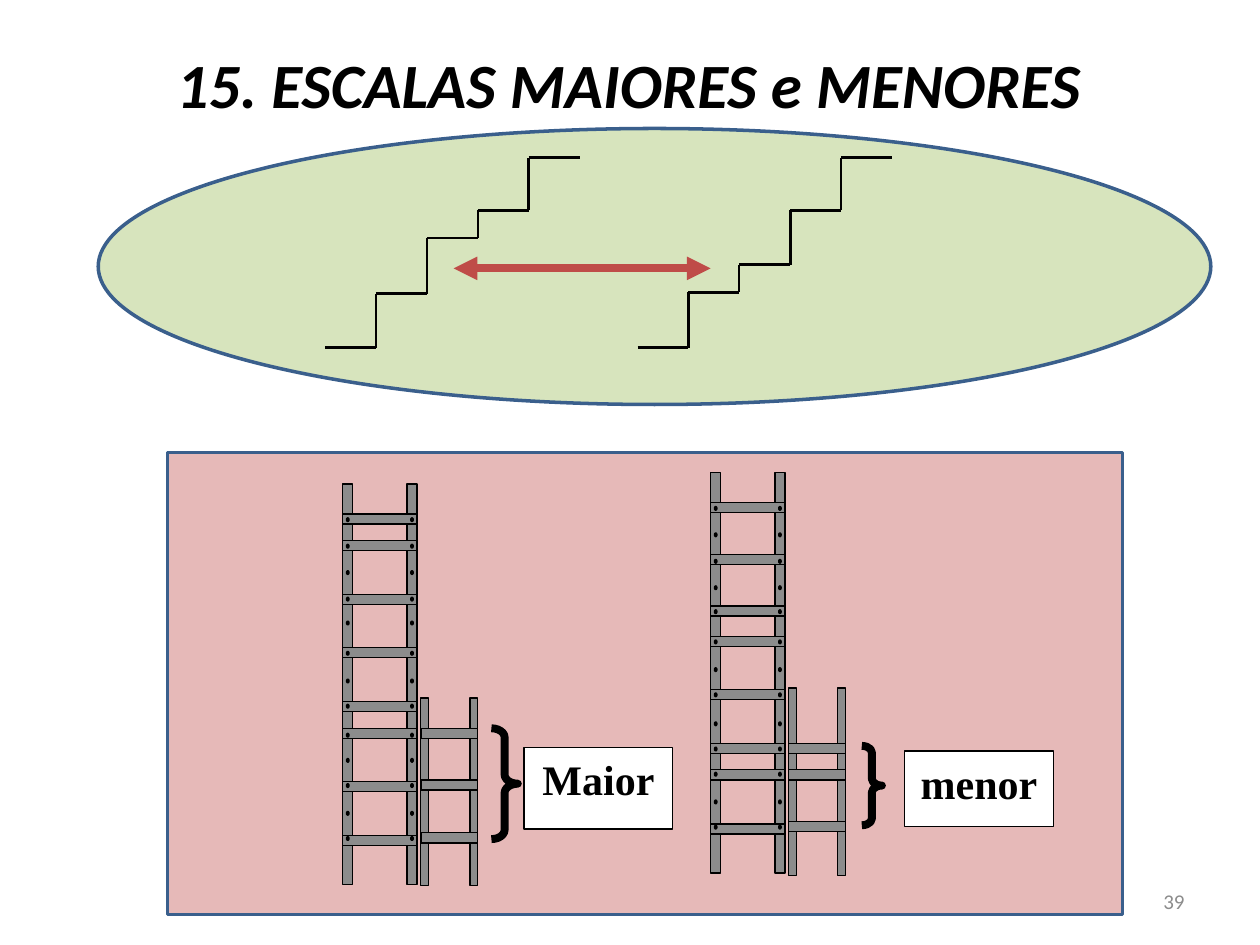
from lxml import etree
from pptx import Presentation
from pptx import util as u
from pptx.dml.color import RGBColor
from pptx.enum import shapes, text
from pptx.oxml.ns import qn

BLACK, GREY, WHITE, BLUE = "000000", "8C8C8C", "FFFFFF", "3A5F8C"
KIND, ALIGN, ANCHOR = shapes.MSO_SHAPE, text.PP_ALIGN, text.MSO_ANCHOR
color = RGBColor.from_string


def draw_shape(parent, kind, left, top, width, height, fill=None, line=BLACK, weight=0.75):
    shape = parent.add_shape(kind, *map(u.Inches, (left, top, width, height)))
    shape.shadow.inherit = False
    if fill:
        shape.fill.solid()
        shape.fill.fore_color.rgb = color(fill)
    else:
        shape.fill.background()
    shape.line.color.rgb = color(line)
    shape.line.width = u.Pt(weight)
    return shape


def write_text(box, words, size, font="Calibri", ink=BLACK, bold=False, italic=False,
               align=ALIGN.CENTER, anchor=ANCHOR.MIDDLE, wrap=True):
    frame = box.text_frame
    frame.word_wrap = wrap
    frame.vertical_anchor = anchor
    para = frame.paragraphs[0]
    para.alignment = align
    span = para.add_run()
    span.text = words
    span.font.size = u.Pt(size)
    span.font.name = font
    span.font.bold = bold
    span.font.italic = italic
    span.font.color.rgb = color(ink)


deck = Presentation()
deck.slide_width, deck.slide_height = u.Inches(10), u.Inches(7.5)
page = deck.slides.add_slide(deck.slide_layouts[6])

# Background panels and title
draw_shape(page.shapes, KIND.OVAL, 0.78, 1.02, 8.83, 2.19, "D7E4BD", BLUE, 2)
draw_shape(page.shapes, KIND.RECTANGLE, 1.33, 3.59, 7.58, 3.67, "E6B9B8", BLUE, 2)
title = page.shapes.add_textbox(u.Inches(1.25), u.Inches(0.31), u.Inches(7.48), u.Inches(0.71))
write_text(title, "15. ESCALAS MAIORES e MENORES", 36, bold=True, italic=True, wrap=False)

# Staircases: equal treads, with a thinner riser for the half step
TREAD = 0.404
segments = []
for start, levels in ((5.06, (2.76, 2.32, 2.1, 1.67, 1.25)),
                      (2.58, (2.76, 2.33, 1.89, 1.67, 1.25))):
    for step, level in enumerate(levels):
        left = start + step * TREAD
        segments.append((left, level, left + TREAD, level, BLACK, 1.5))
        if step:
            below = levels[step - 1]
            weight = 1 if below - level < 0.3 else 1.5
            segments.append((left, level, left, below, BLACK, weight))
segments.append((3.6, 2.13, 5.64, 2.13, "BF4C48", 4.5))

stairs = page.shapes.add_group_shape().shapes
for x1, y1, x2, y2, ink, weight in segments:
    arrow = stairs.add_connector(shapes.MSO_CONNECTOR.STRAIGHT,
                                 *map(u.Inches, (x1, y1, x2, y2)))
    arrow.line.color.rgb = color(ink)
    arrow.line.width = u.Pt(weight)
    etree.SubElement(arrow._element.spPr, qn("a:effectLst"))
# The last segment is the double-headed arrow
for end in ("a:headEnd", "a:tailEnd"):
    etree.SubElement(arrow.line._get_or_add_ln(), qn(end), type="triangle")

# Ladders: rungs and bolts are measured down from the top of the rails
BOLTS = (0.27, 0.48, 0.69, 0.9, 1.09, 1.33, 1.55, 1.75, 1.98, 2.18, 2.38, 2.6, 2.8)
LADDERS = (
    dict(tall=(2.72, 3.84), tall_rungs=(0.24, 0.45, 0.88, 1.3, 1.73, 1.94, 2.36, 2.79),
         short=(3.34, 5.54), short_rungs=(0.24, 0.65, 1.07),
         brace=(3.9, 5.78, 0.21, 0.88), curve=0.346,
         label="Maior", box=(4.16, 5.93, 1.18, 0.65)),
    dict(tall=(5.64, 3.75), tall_rungs=(0.24, 0.65, 1.06, 1.3, 1.72, 2.15, 2.36, 2.79),
         short=(6.26, 5.46), short_rungs=(0.44, 0.65, 1.06),
         brace=(6.84, 5.92, 0.16, 0.63), curve=0.327,
         label="menor", box=(7.18, 5.96, 1.18, 0.6)),
)
group = page.shapes.add_group_shape().shapes
for ladder in LADDERS:
    for size, rail, width, height in (("short", 0.06, 0.45, 1.49), ("tall", 0.08, 0.59, 3.18)):
        left, top = ladder[size]
        for x in (left, left + width - rail):
            draw_shape(group, KIND.RECTANGLE, x, top, rail, height, GREY)
        for drop in ladder[size + "_rungs"]:
            draw_shape(group, KIND.RECTANGLE, left, top + drop, width, 0.08, GREY)
    left, top = ladder["tall"]
    for drop in BOLTS:
        for inset in (0.03, 0.54):
            draw_shape(group, KIND.OVAL, left + inset, top + drop, 0.02, 0.03, BLACK)
    brace = draw_shape(group, KIND.RIGHT_BRACE, *ladder["brace"], weight=4.5)
    brace.adjustments[0] = ladder["curve"]
    label = draw_shape(group, KIND.RECTANGLE, *ladder["box"], WHITE)
    write_text(label, ladder["label"], 24, font="Times New Roman", bold=True, anchor=ANCHOR.TOP)

number = page.shapes.add_textbox(u.Inches(7.17), u.Inches(6.95), u.Inches(2.33), u.Inches(0.4))
write_text(number, "39", 12, ink=GREY, align=ALIGN.RIGHT)

deck.save("out.pptx")
